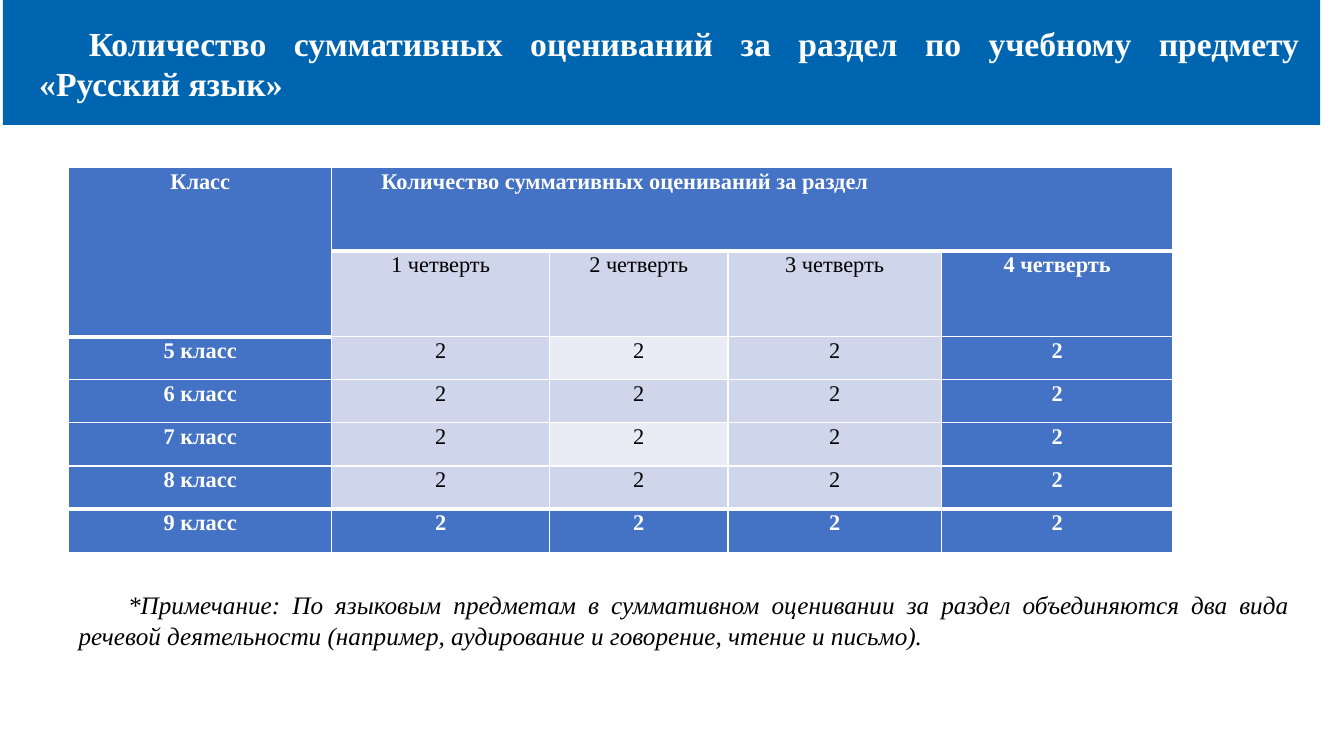
from lxml import etree
from pptx import Presentation
from pptx.dml.color import RGBColor
from pptx.enum.shapes import MSO_SHAPE
from pptx.enum.text import MSO_ANCHOR, MSO_AUTO_SIZE, PP_ALIGN
from pptx.oxml.ns import qn
from pptx.util import Pt

RECTANGLE = MSO_SHAPE.RECTANGLE
TOP, MIDDLE = MSO_ANCHOR.TOP, MSO_ANCHOR.MIDDLE
CENTER, JUSTIFY = PP_ALIGN.CENTER, PP_ALIGN.JUSTIFY
NO_AUTOFIT = MSO_AUTO_SIZE.NONE

WHITE = RGBColor(0xFF, 0xFF, 0xFF)
BLACK = RGBColor(0, 0, 0)
BAND_BLUE = RGBColor(0x00, 0x65, 0xB0)
HEADER_BLUE = RGBColor(0x44, 0x72, 0xC4)
CELL_BLUE = RGBColor(0xCF, 0xD5, 0xEA)
PALE_BLUE = RGBColor(0xE9, 0xEB, 0xF5)

FONT = "Times New Roman"
FIRST_LINE = Pt(35.4)
THIN, THICK = Pt(1), Pt(3)

TITLE = "Количество суммативных оцениваний за раздел по учебному предмету «Русский язык»"
NOTE = ("*Примечание: По языковым предметам в суммативном оценивании за раздел "
        "объединяются два вида речевой деятельности (например, аудирование и "
        "говорение, чтение и письмо).")
ROWS = [
    ["Класс", "Количество суммативных оцениваний за раздел", "", "", ""],
    ["", *(f"{quarter} четверть" for quarter in range(1, 5))],
    *([f"{grade} класс"] + ["2"] * 4 for grade in range(5, 10)),
]
COLUMN_WIDTHS = [188, 155.5, 127.5, 152.5, 165.5]
ROW_HEIGHTS = [60, 61] + [30.8] * 5
LAST_ROW, LAST_COLUMN = len(ROWS) - 1, len(COLUMN_WIDTHS) - 1


def write_text(frame, text, size, color=BLACK, bold=False, italic=False,
               align=JUSTIFY, indent=0, line_spacing=1.0):
    para = frame.paragraphs[0]
    para.alignment = align
    para.line_spacing = line_spacing
    if indent:
        properties = para._p.get_or_add_pPr()
        properties.set("marL", "0")
        properties.set("indent", str(int(indent)))
    span = para.add_run()
    span.text = text
    span.font.name = FONT
    span.font.size = Pt(size)
    span.font.bold = bold
    span.font.italic = italic
    span.font.color.rgb = color


def add_heading(page, left, top, width, height):
    band = page.shapes.add_shape(RECTANGLE, Pt(left), Pt(top), Pt(width), Pt(height))
    band.shadow.inherit = False
    band.fill.solid()
    band.fill.fore_color.rgb = BAND_BLUE
    band.line.fill.background()

    title = page.shapes.title
    title.element.addprevious(band.element)
    title.left, title.top = Pt(left + 18.8), Pt(top + 12.2)
    title.width, title.height = Pt(width - 26.6), Pt(65.5)
    frame = title.text_frame
    frame.word_wrap = True
    frame.auto_size = NO_AUTOFIT
    frame.vertical_anchor = MIDDLE
    write_text(frame, TITLE, 24, color=WHITE, bold=True, indent=FIRST_LINE)


def has_thick_bottom(row, column):
    """Thick rules close the header row, the class header and the last body row."""
    return row in (0, LAST_ROW - 1) or (row, column) == (1, 0)


def draw_borders(cell, row, column):
    properties = cell._tc.get_or_add_tcPr()
    widths = {
        "a:lnL": THIN,
        "a:lnR": THIN,
        "a:lnT": THICK if has_thick_bottom(row - 1, column) else THIN,
        "a:lnB": THICK if has_thick_bottom(row, column) else THIN,
    }
    for position, (tag, width) in enumerate(widths.items()):
        line = etree.Element(qn(tag), w=str(int(width)))
        fill = etree.SubElement(line, qn("a:solidFill"))
        etree.SubElement(fill, qn("a:srgbClr"), val=str(WHITE))
        properties.insert(position, line)


def cell_fill(row, column):
    if row in (0, LAST_ROW) or column in (0, LAST_COLUMN):
        return HEADER_BLUE
    return PALE_BLUE if column == 2 and row % 2 == 0 else CELL_BLUE


def add_grades_table(page, left, top):
    table = page.shapes.add_table(
        len(ROWS), len(COLUMN_WIDTHS), Pt(left), Pt(top),
        Pt(sum(COLUMN_WIDTHS)), Pt(sum(ROW_HEIGHTS))).table
    table.first_row = table.horz_banding = False
    for column, width in zip(table.columns, COLUMN_WIDTHS):
        column.width = Pt(width)
    for row, height in zip(table.rows, ROW_HEIGHTS):
        row.height = Pt(height)
    table.cell(0, 0).merge(table.cell(1, 0))
    table.cell(0, 1).merge(table.cell(0, LAST_COLUMN))

    for row, texts in enumerate(ROWS):
        for column, text in enumerate(texts):
            cell = table.cell(row, column)
            fill = cell_fill(row, column)
            cell.fill.solid()
            cell.fill.fore_color.rgb = fill
            draw_borders(cell, row, column)
            cell.margin_left = cell.margin_right = 0
            cell.margin_top = cell.margin_bottom = 0
            cell.vertical_anchor = TOP
            if not text:
                continue
            dark = fill == HEADER_BLUE
            wide = (row, column) == (0, 1)
            write_text(cell.text_frame, text, 16, color=WHITE if dark else BLACK,
                       bold=dark, align=JUSTIFY if wide else CENTER,
                       indent=FIRST_LINE if wide else 0, line_spacing=1.07)


def add_note(page, left, top, width, height):
    box = page.shapes.add_textbox(Pt(left), Pt(top), Pt(width), Pt(height))
    box.text_frame.word_wrap = True
    write_text(box.text_frame, NOTE, 18, italic=True, indent=FIRST_LINE)


def main():
    deck = Presentation()
    deck.slide_width, deck.slide_height = Pt(960), Pt(540)
    page = deck.slides.add_slide(deck.slide_layouts.get_by_name("Title Only"))
    add_heading(page, 2, 0, 941, 89.3)
    add_grades_table(page, 49, 119.5)
    add_note(page, 49, 417.6, 879, 51)
    deck.save("out.pptx")


if __name__ == "__main__":
    main()
